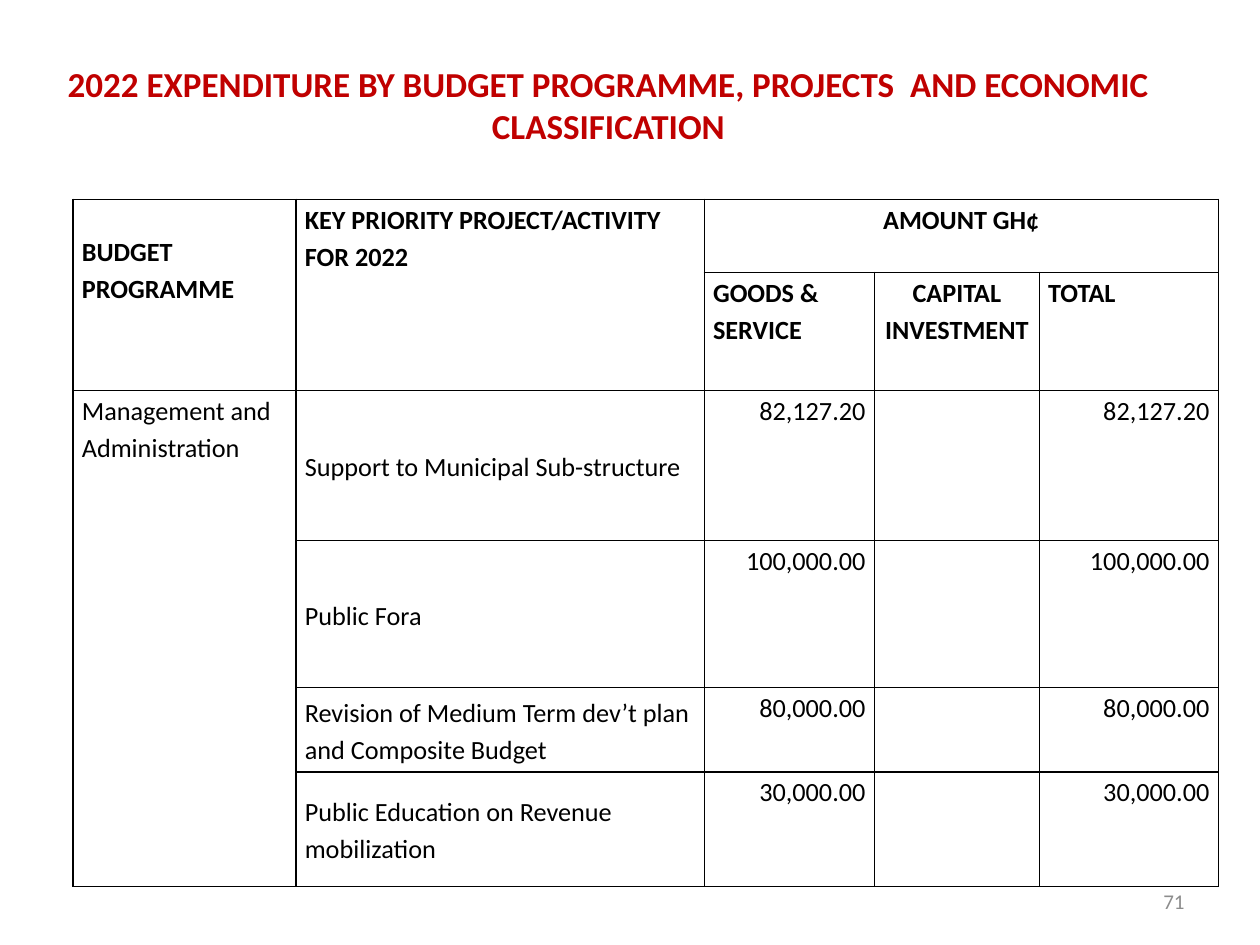
"""Build the 2022 expenditure slide: a title, a budget table and a page number."""
from lxml.etree import SubElement
from pptx import Presentation
from pptx.dml.color import RGBColor
from pptx.enum.text import MSO_ANCHOR as Anchor, PP_ALIGN as Align
from pptx.oxml.ns import qn
from pptx.util import Inches, Pt

RED = RGBColor(0xC0, 0x00, 0x00)
BLACK = RGBColor(0x00, 0x00, 0x00)
GREY = RGBColor(0x8C, 0x8C, 0x8C)
FONT = "Calibri"

TITLE_BOX = (0.033, 0.033, 0.9, 0.156)
TABLE_BOX = (0.058, 0.211, 0.909, 0.727)
NUMBER_BOX = (0.717, 0.927, 0.233, 0.053)

COLUMN_SHARES = (1.77, 3.24, 1.35, 1.31, 1.42)
ROW_SHARES = (0.58, 0.94, 1.19, 1.17, 0.67, 0.91)
HEADER_ROWS = 2

TITLE = "2022 EXPENDITURE BY BUDGET PROGRAMME, PROJECTS  AND ECONOMIC CLASSIFICATION"
PROGRAMME = "Management and Administration"
ACTIVITIES = (
    ("Support to Municipal Sub-structure", "82,127.20"),
    ("Public Fora", "100,000.00"),
    ("Revision of Medium Term dev’t plan and Composite Budget", "80,000.00"),
    ("Public Education on Revenue mobilization", "30,000.00"),
)
HEADERS = (
    (0, 0, "BUDGET PROGRAMME", Align.LEFT),
    (0, 1, "KEY PRIORITY PROJECT/ACTIVITY FOR 2022", Align.LEFT),
    (0, 2, "AMOUNT GH¢", Align.CENTER),
    (1, 2, "GOODS & SERVICE", Align.LEFT),
    (1, 3, "CAPITAL INVESTMENT", Align.CENTER),
    (1, 4, "TOTAL", Align.LEFT),
)
MERGES = (((0, 0), (1, 0)), ((0, 1), (1, 1)), ((0, 2), (0, 4)), ((2, 0), (5, 0)))


def scale_box(presentation, box):
    """Turn shares of the slide's size into lengths."""
    width, height = presentation.slide_width, presentation.slide_height
    left, top, across, down = box
    return int(left * width), int(top * height), int(across * width), int(down * height)


def write_text(frame, text, size=15, color=BLACK, bold=False, align=Align.LEFT, spacing=1.0):
    """Write one formatted paragraph into a text frame."""
    frame.word_wrap = True
    paragraph = frame.paragraphs[0]
    paragraph.alignment = align
    paragraph.line_spacing = spacing
    run = paragraph.add_run()
    run.text = text
    run.font.name = FONT
    run.font.size = Pt(size)
    run.font.bold = bold
    run.font.color.rgb = color


def style_cell(cell):
    """Give a cell thin black borders, no fill and narrow margins."""
    properties = cell._tc.get_or_add_tcPr()
    for side in ("a:lnL", "a:lnR", "a:lnT", "a:lnB"):
        line = SubElement(properties, qn(side), w=str(Pt(1)))
        fill = SubElement(line, qn("a:solidFill"))
        SubElement(fill, qn("a:srgbClr"), val=str(BLACK))
    cell.fill.background()
    cell.margin_left = cell.margin_right = Inches(0.07)
    cell.margin_top = cell.margin_bottom = 0


def add_title(slide, box):
    """Place the red title in the title placeholder."""
    title = slide.shapes.title
    title.left, title.top, title.width, title.height = box
    title.text_frame.vertical_anchor = Anchor.MIDDLE
    write_text(title.text_frame, TITLE, size=20, color=RED, bold=True, align=Align.CENTER)


def add_budget_table(slide, box):
    """Place the table of activities and amounts."""
    _, _, width, height = box
    table = slide.shapes.add_table(len(ROW_SHARES), len(COLUMN_SHARES), *box).table
    table.first_row = table.horz_banding = False
    for column, share in zip(table.columns, COLUMN_SHARES):
        column.width = int(width * share / sum(COLUMN_SHARES))
    for row, share in zip(table.rows, ROW_SHARES):
        row.height = int(height * share / sum(ROW_SHARES))
    for cell in table.iter_cells():
        style_cell(cell)
    for first, last in MERGES:
        table.cell(*first).merge(table.cell(*last))

    for row, column, text, align in HEADERS:
        write_text(table.cell(row, column).text_frame, text, bold=True, align=align, spacing=1.15)
    table.cell(0, 0).margin_top = Inches(0.26)
    write_text(table.cell(HEADER_ROWS, 0).text_frame, PROGRAMME, spacing=1.15)
    for row, (activity, amount) in enumerate(ACTIVITIES, HEADER_ROWS):
        name = table.cell(row, 1)
        name.vertical_anchor = Anchor.MIDDLE
        write_text(name.text_frame, activity, spacing=1.15)
        for column in (2, 4):
            write_text(table.cell(row, column).text_frame, amount, align=Align.RIGHT, spacing=1.15)


def add_page_number(slide, box):
    """Place the grey page number at the bottom right."""
    frame = slide.shapes.add_textbox(*box).text_frame
    frame.vertical_anchor = Anchor.MIDDLE
    write_text(frame, "71", size=12, color=GREY, align=Align.RIGHT)


def main():
    """Build and save the presentation."""
    presentation = Presentation()
    presentation.slide_width, presentation.slide_height = Inches(10), Inches(7.5)
    slide = presentation.slides.add_slide(presentation.slide_layouts[5])
    add_title(slide, scale_box(presentation, TITLE_BOX))
    add_budget_table(slide, scale_box(presentation, TABLE_BOX))
    add_page_number(slide, scale_box(presentation, NUMBER_BOX))
    presentation.save("out.pptx")


if __name__ == "__main__":
    main()
